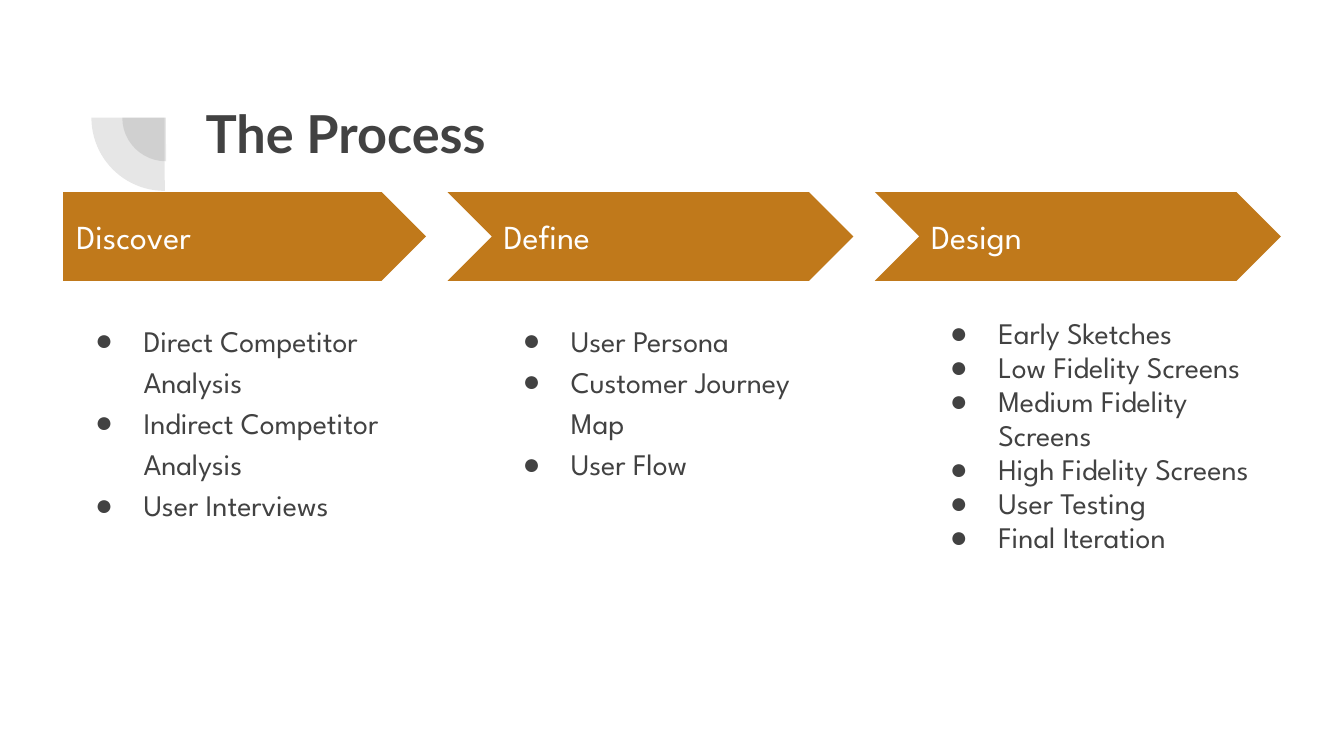
from lxml.etree import SubElement
from pptx import Presentation
from pptx.dml.color import RGBColor
from pptx.enum.shapes import MSO_SHAPE
from pptx.enum.text import MSO_ANCHOR, PP_ALIGN
from pptx.oxml.ns import qn
from pptx.util import Inches, Pt

TITLE = "The Process"
# heading, arrow shape, line spacing, bullets
STAGES = [
    ("Discover", MSO_SHAPE.PENTAGON, 1.15,
     ["Direct Competitor Analysis", "Indirect Competitor Analysis", "User Interviews"]),
    ("Define", MSO_SHAPE.CHEVRON, 1.15,
     ["User Persona", "Customer Journey Map", "User Flow"]),
    ("Design", MSO_SHAPE.CHEVRON, 0.95,
     ["Early Sketches", "Low Fidelity Screens", "Medium Fidelity Screens",
      "High Fidelity Screens", "User Testing", "Final Iteration"]),
]
# left, top, diameter
QUARTER_CIRCLES = [(0.91, 0.55, 0.65), (0.68, 0.33, 1.09)]

DARK = RGBColor(0x42, 0x42, 0x42)
ORANGE = RGBColor(0xC0, 0x79, 0x1B)
WHITE = RGBColor(0xFF, 0xFF, 0xFF)
TITLE_FONT, BODY_FONT, BULLET_FONT = "Lato", "League Spartan", "Arial"

FIRST_LEFT, COLUMN_STEP, COLUMN_WIDTH = 0.47, 3.18, 2.7
CHEVRON_NOTCH = 0.32
ARROW_TOP, ARROW_HEIGHT = 1.43, 0.66


def add_shape(slide, kind, left, top, width, height, color):
    shape = slide.shapes.add_shape(
        kind, Inches(left), Inches(top), Inches(width), Inches(height))
    shape.shadow.inherit = False
    shape.fill.solid()
    shape.fill.fore_color.rgb = color
    shape.line.fill.background()
    return shape


def add_quarter_circle(slide, left, top, diameter):
    pie = add_shape(slide, MSO_SHAPE.PIE, left, top, diameter, diameter, DARK)
    pie.adjustments[0] = 107.93
    pie.adjustments[1] = 162
    pie.rotation = 270
    color = pie.fill._xPr.find(qn("a:solidFill"))[0]
    SubElement(color, qn("a:alpha"), val="13000")


def format_frame(frame, anchor):
    frame.word_wrap = True
    frame.vertical_anchor = anchor
    frame.margin_left = frame.margin_right = Inches(0.1)
    frame.margin_top = frame.margin_bottom = Inches(0.1)


def add_text_frame(slide, left, top, width, height, anchor):
    box = slide.shapes.add_textbox(
        Inches(left), Inches(top), Inches(width), Inches(height))
    format_frame(box.text_frame, anchor)
    return box.text_frame


def add_run(paragraph, text, font, size, color, bold=False):
    run = paragraph.add_run()
    run.text = text
    run.font.name = font
    run.font.size = Pt(size)
    run.font.color.rgb = color
    run.font.bold = bold


def add_bullet(paragraph):
    properties = paragraph._p.get_or_add_pPr()
    properties.set("marL", str(Inches(0.5)))
    properties.set("indent", str(Inches(-0.36)))
    bullet_color = SubElement(properties, qn("a:buClr"))
    SubElement(bullet_color, qn("a:srgbClr"), val=str(DARK))
    SubElement(properties, qn("a:buFont"), typeface=BULLET_FONT)
    SubElement(properties, qn("a:buChar"), char="●")


def add_stage(slide, index, heading, arrow, line_spacing, bullets):
    left = FIRST_LEFT + index * COLUMN_STEP
    notch = CHEVRON_NOTCH if arrow == MSO_SHAPE.CHEVRON else 0
    add_shape(slide, arrow, left - notch, ARROW_TOP,
              COLUMN_WIDTH + notch, ARROW_HEIGHT, ORANGE)

    frame = add_text_frame(slide, left, 1.59, 2.47, 0.34, MSO_ANCHOR.MIDDLE)
    add_run(frame.paragraphs[0], heading, BODY_FONT, 18, WHITE)

    frame = add_text_frame(slide, left, 2.26, COLUMN_WIDTH, 2.9, MSO_ANCHOR.TOP)
    for number, text in enumerate(bullets):
        paragraph = frame.add_paragraph() if number else frame.paragraphs[0]
        paragraph.line_spacing = line_spacing
        add_bullet(paragraph)
        add_run(paragraph, text, BODY_FONT, 16, DARK)


def main():
    presentation = Presentation()
    presentation.slide_width = Inches(10)
    presentation.slide_height = Inches(10 * 9 / 16)
    slide = presentation.slides.add_slide(presentation.slide_layouts[5])

    for circle in QUARTER_CIRCLES:
        add_quarter_circle(slide, *circle)

    title = slide.shapes.title
    title.left, title.top = Inches(1.43), Inches(0.65)
    title.width, title.height = Inches(7.69), Inches(1.09)
    format_frame(title.text_frame, MSO_ANCHOR.TOP)
    paragraph = title.text_frame.paragraphs[0]
    paragraph.alignment = PP_ALIGN.LEFT
    add_run(paragraph, TITLE, TITLE_FONT, 28, DARK, bold=True)

    for index, stage in enumerate(STAGES):
        add_stage(slide, index, *stage)

    presentation.save("out.pptx")


if __name__ == "__main__":
    main()
